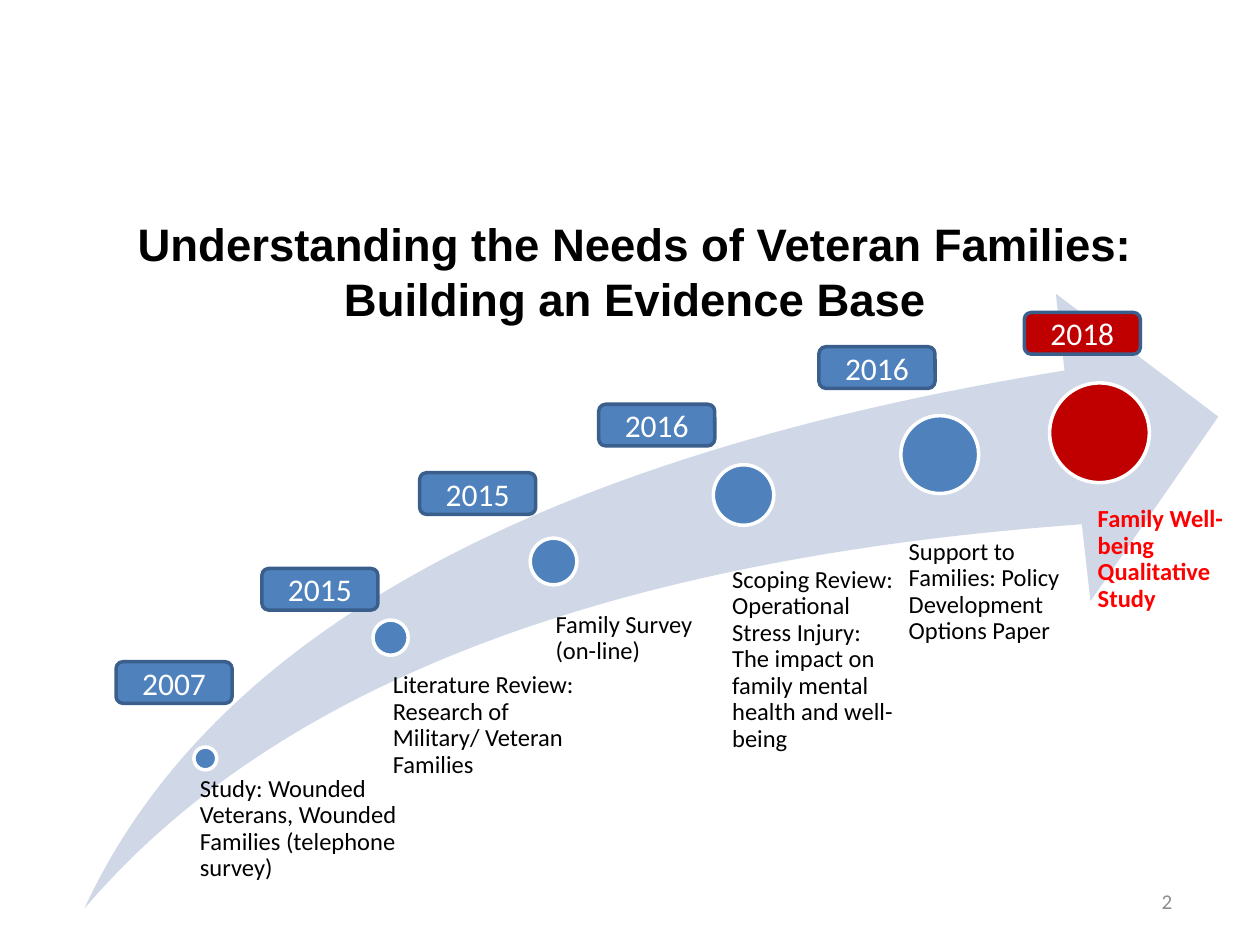
import dataclasses

import pptx
import pptx.dml.color
import pptx.enum.shapes
import pptx.enum.text
import pptx.util

Cm = pptx.util.Cm
Pt = pptx.util.Pt
RGB = pptx.dml.color.RGBColor.from_string
MSO_SHAPE = pptx.enum.shapes.MSO_SHAPE
PP_ALIGN = pptx.enum.text.PP_ALIGN
MSO_ANCHOR = pptx.enum.text.MSO_ANCHOR


@dataclasses.dataclass(frozen=True)
class Theme:
    heading_font: str = "Arial"
    body_font: str = "Calibri"
    black: str = "000000"
    white: str = "FFFFFF"
    gray: str = "8C8C8C"
    swoosh: str = "D0D8E8"
    blue: str = "4F81BD"
    badge_line: str = "3A5F8C"
    dark_red: str = "C00000"
    bright_red: str = "FF0000"
    title_size: int = 26
    year_size: int = 18
    label_size: int = 14
    number_size: int = 12
    line_width: int = 2


theme = Theme()
presentation = pptx.Presentation()
presentation.slide_width = Cm(25.4)
presentation.slide_height = Cm(19.05)
slide = presentation.slides.add_slide(presentation.slide_layouts[6])


def add_shape(kind, left, top, width, height, fill, line=None):
    shape = slide.shapes.add_shape(kind, Cm(left), Cm(top), Cm(width), Cm(height))
    shape.shadow.inherit = False
    shape.fill.solid()
    shape.fill.fore_color.rgb = RGB(fill)
    if line:
        shape.line.color.rgb = RGB(line)
        shape.line.width = Pt(theme.line_width)
    else:
        shape.line.fill.background()
    return shape


def write(shape, lines, size, color, font=theme.body_font, bold=False,
          align=PP_ALIGN.LEFT, anchor=MSO_ANCHOR.MIDDLE, inset=0):
    frame = shape.text_frame
    frame.word_wrap = True
    frame.vertical_anchor = anchor
    frame.margin_left = Cm(inset)
    frame.margin_right = frame.margin_top = frame.margin_bottom = 0
    paragraph = frame.paragraphs[0]
    paragraph.alignment = align
    for index, line in enumerate(lines):
        if index:
            paragraph.add_line_break()
        run = paragraph.add_run()
        run.text = line
        run.font.name = font
        run.font.size = Pt(size)
        run.font.bold = bold
        run.font.color.rgb = RGB(color)
    return paragraph


number_box = slide.shapes.add_textbox(Cm(18.21), Cm(17.65), Cm(5.67), Cm(1.02))
write(number_box, ["2"], theme.number_size, theme.gray, align=PP_ALIGN.RIGHT)
number_box.text_frame.margin_right = Cm(0.25)

title_box = slide.shapes.add_textbox(Cm(0.84), Cm(4.34), Cm(23.93), Cm(2.24))
write(title_box, ["Understanding the Needs of Veteran Families: Building an Evidence Base"],
      theme.title_size, theme.black, theme.heading_font, True, PP_ALIGN.CENTER)

swoosh = add_shape(MSO_SHAPE.SWOOSH_ARROW, 1.7, 5.92, 22.86, 12.4, theme.swoosh)
swoosh.adjustments[0] = 0.25
swoosh.adjustments[1] = 0.25

milestones = [
    ("2007", (2.34, 13.34), (3.91, 15.06, 0.46), (3.78, 15.65, 5.23, 2.57), 0.25,
     ["Study: Wounded Veterans, Wounded Families (telephone survey)"]),
    ("2015", (5.28, 11.46), (7.52, 12.5, 0.71), (7.54, 13.56, 4.45, 4.72), 0.38,
     ["Literature Review: Research of Military/ Veteran Families"]),
    ("2015", (8.46, 9.53), (10.69, 10.85, 0.94), (10.69, 12.34, 3.61, 5.66), 0.51,
     ["Family Survey (on-line)"]),
    ("2016", (12.07, 8.15), (14.38, 9.37, 1.22), (14.1, 11.43, 3.96, 6.5), 0.66,
     ["Scoping Review: Operational Stress Injury: The impact on family mental health and well-being"]),
    ("2016", (16.51, 6.99), (18.16, 8.38, 1.57), (17.48, 10.87, 4.34, 5.64), 0.84,
     ["Support to Families: Policy Development Options Paper"]),
    ("2018", (20.65, 6.3), (21.16, 7.72, 2.01), (21.29, 10.21, 4.34, 2.49), 0.84,
     ["Family Well-being", "Qualitative", "Study"]),
]

for year, badge_place, (dot_left, dot_top, diameter), label_place, inset, lines in milestones:
    current = year == "2018"
    fill = theme.dark_red if current else theme.blue
    label_color = theme.bright_red if current else theme.black

    add_shape(MSO_SHAPE.OVAL, dot_left, dot_top, diameter, diameter, fill, theme.white)

    label = slide.shapes.add_textbox(*map(Cm, label_place))
    paragraph = write(label, lines, theme.label_size, label_color, bold=current,
                      anchor=MSO_ANCHOR.TOP, inset=inset)
    paragraph.line_spacing = 0.9

    badge = add_shape(MSO_SHAPE.ROUNDED_RECTANGLE, *badge_place, 2.34, 0.84, fill, theme.badge_line)
    write(badge, [year], theme.year_size, theme.white, align=PP_ALIGN.CENTER)

presentation.save("out.pptx")
